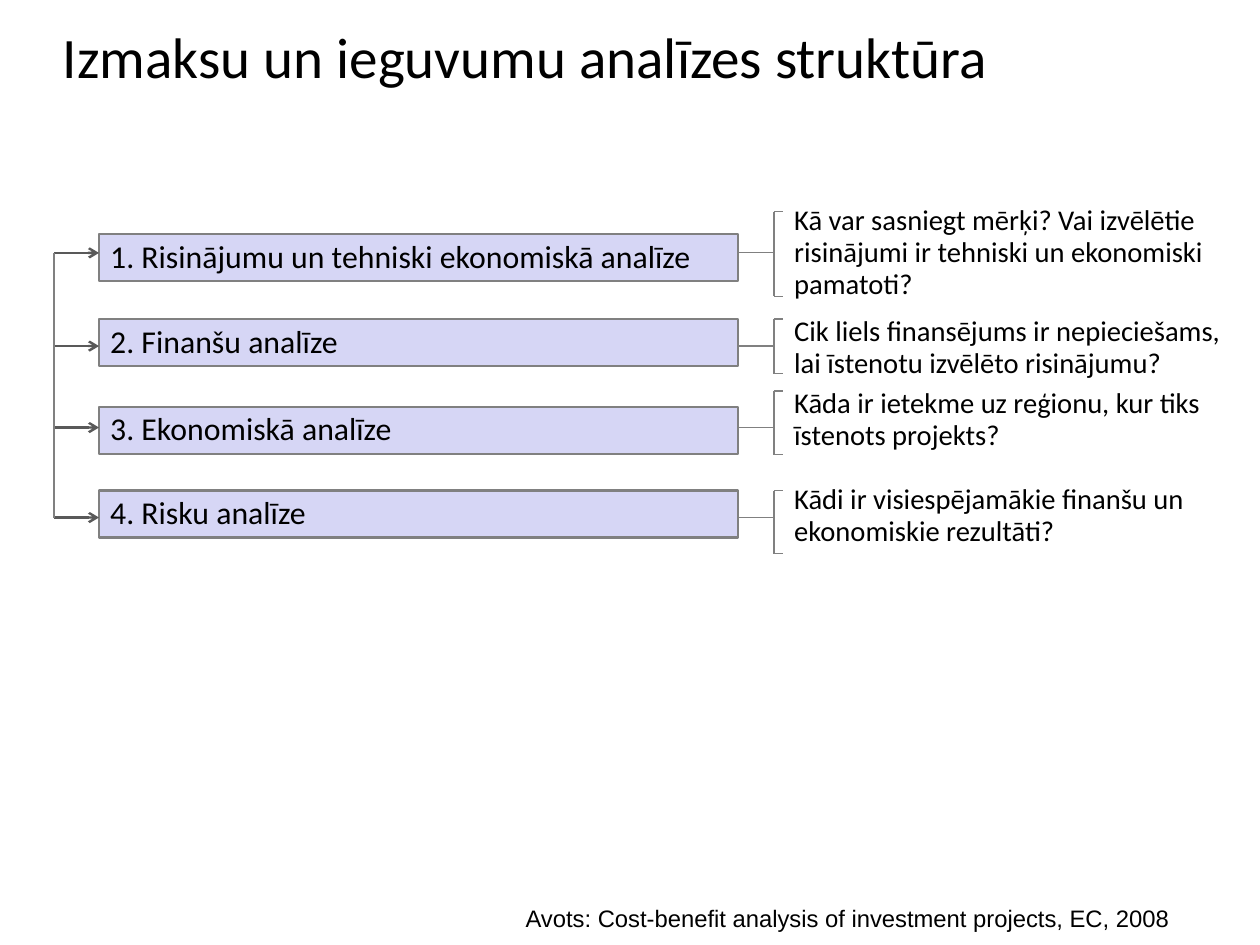
from lxml.etree import SubElement
from pptx import Presentation
from pptx.dml.color import RGBColor
from pptx.enum.shapes import MSO_CONNECTOR as Connector, MSO_SHAPE as Shape
from pptx.enum.text import MSO_ANCHOR as Anchor, PP_ALIGN as Align
from pptx.oxml.ns import qn
from pptx.util import Cm, Pt

BLACK = RGBColor(0x00, 0x00, 0x00)
GRAY = RGBColor(0x80, 0x80, 0x80)
DARK_GRAY = RGBColor(0x59, 0x59, 0x59)
LAVENDER = RGBColor(0xD6, 0xD6, 0xF5)

SPINE_X = 1.2
STEP_LEFT, STEP_WIDTH, STEP_HEIGHT = 2.2, 14.2, 1.05
BRACKET_X, NOTE_LEFT, NOTE_WIDTH = 17.2, 17.4, 10.4

# Each step: label, question, box top, arrow height, bracket top and bottom, question top
STEPS = [
    ("1. Risinājumu un tehniski ekonomiskā analīze",
     "Kā var sasniegt mērķi? Vai izvēlētie risinājumi ir tehniski un ekonomiski pamatoti?",
     5.2, 5.62, 4.7, 6.58, 4.42),
    ("2. Finanšu analīze",
     "Cik liels finansējums ir nepieciešams, lai īstenotu izvēlēto risinājumu?",
     7.09, 7.69, 7.09, 8.3, 6.9),
    ("3. Ekonomiskā analīze",
     "Kāda ir ietekme uz reģionu, kur tiks īstenots projekts?",
     9.04, 9.5, 8.69, 10.1, 8.5),
    ("4. Risku analīze",
     "Kādi ir visiespējamākie finanšu un ekonomiskie rezultāti?",
     10.9, 11.5, 10.9, 12.3, 10.62),
]


def write_text(shape, text, size, font="Calibri", spacing=0.93, insets=(0.25, 0.13)):
    """Fill a shape with one left-aligned paragraph."""
    frame = shape.text_frame
    frame.word_wrap = True
    frame.vertical_anchor = Anchor.TOP
    frame.margin_left = frame.margin_right = Cm(insets[0])
    frame.margin_top = frame.margin_bottom = Cm(insets[1])
    para = frame.paragraphs[0]
    para.alignment = Align.LEFT
    para.line_spacing = spacing
    span = para.add_run()
    span.text = text
    span.font.name = font
    span.font.size = Pt(size)
    span.font.color.rgb = BLACK


def add_text(page, box, text, size, **style):
    """Place a text box in the given left, top, width, height."""
    write_text(page.shapes.add_textbox(*map(Cm, box)), text, size, **style)


def add_line(page, start, end, color=GRAY, width=0.75, arrow=False):
    """Draw a straight line, with an arrowhead at its end if asked."""
    line = page.shapes.add_connector(Connector.STRAIGHT, *map(Cm, start + end))
    line.line.color.rgb = color
    line.line.width = Pt(width)
    if arrow:
        SubElement(line.line._get_or_add_ln(), qn("a:tailEnd"), type="arrow")
    SubElement(line._element.spPr, qn("a:effectLst"))


def add_step(page, box, label):
    """Draw the labelled box of one analysis step."""
    step = page.shapes.add_shape(Shape.RECTANGLE, *map(Cm, box))
    step.shadow.inherit = False
    step.fill.solid()
    step.fill.fore_color.rgb = LAVENDER
    step.line.color.rgb = GRAY
    step.line.width = Pt(1.5)
    write_text(step, label, 20)


def add_bracket(page, box, stem_left, stem_y):
    """Draw an opening bracket in the box and the stem that leads to it."""
    left, top, width, height = box
    add_line(page, (stem_left, stem_y), (left, stem_y))
    add_line(page, (left, top), (left, top + height))
    for y in (top, top + height):
        add_line(page, (left, y), (left + width, y))


def add_structure(page):
    """Draw the spine and every step with its arrow, bracket and question."""
    for label, question, top, arrow_y, upper, lower, note_top in STEPS:
        add_step(page, (STEP_LEFT, top, STEP_WIDTH, STEP_HEIGHT), label)
        add_line(page, (SPINE_X, arrow_y), (STEP_LEFT, arrow_y),
                 color=DARK_GRAY, width=1.5, arrow=True)
        add_bracket(page, (BRACKET_X, upper, NOTE_LEFT - BRACKET_X, lower - upper),
                    STEP_LEFT + STEP_WIDTH, arrow_y)
        note_height = 2.4 if label == STEPS[0][0] else 1.68
        add_text(page, (NOTE_LEFT, note_top, NOTE_WIDTH, note_height), question, 18)
    add_line(page, (SPINE_X, STEPS[0][3]), (SPINE_X, STEPS[-1][3]), width=1.5)


def main():
    """Build the slide and save it."""
    deck = Presentation()
    deck.slide_width, deck.slide_height = Cm(28), Cm(21)
    page = deck.slides.add_slide(deck.slide_layouts[6])
    add_text(page, (1.4, 0, 25.2, 3.5), "Izmaksu un ieguvumu analīzes struktūra", 36,
             spacing=1.01, insets=(0, 0.46))
    add_structure(page)
    add_text(page, (11.4, 20, 16.4, 0.9),
             "Avots: Cost-benefit analysis of investment projects, EC, 2008", 15,
             font="Arial", insets=(0.28, 0.15))
    deck.save("out.pptx")


if __name__ == "__main__":
    main()
